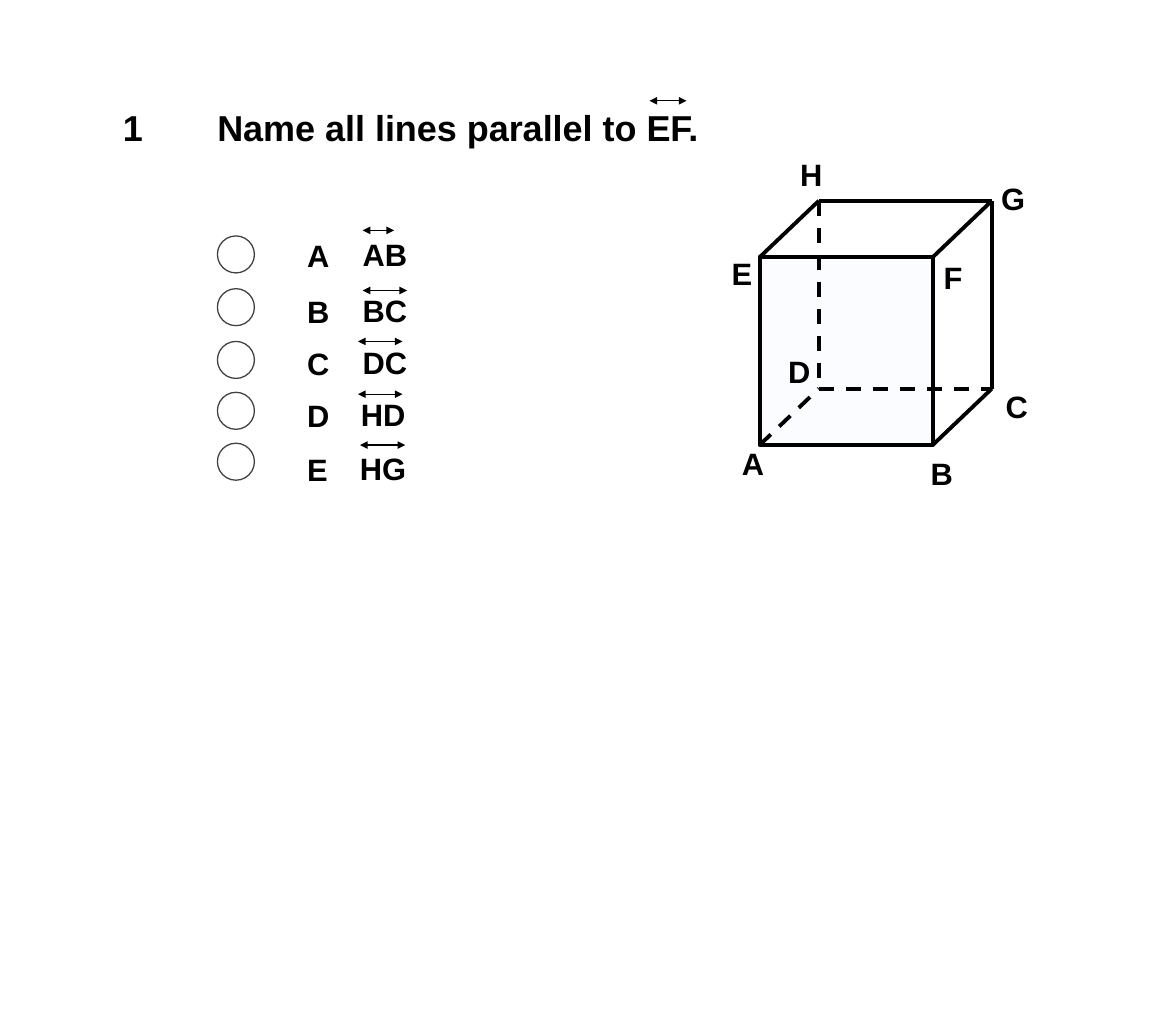
from lxml.etree import SubElement
from pptx import Presentation
from pptx.dml.color import RGBColor
from pptx.enum.dml import MSO_LINE
from pptx.enum.shapes import MSO_CONNECTOR, MSO_SHAPE
from pptx.oxml.ns import qn
from pptx.util import Inches, Pt

BLACK = RGBColor(0x00, 0x00, 0x00)
WHITE = RGBColor(0xFF, 0xFF, 0xFF)
GREY = RGBColor(0x40, 0x40, 0x40)
FACE_TINT = RGBColor(0xFA, 0xFC, 0xFF)

CHOICES = [
    ("A", "AB", 2.49, 0.12, 0.34, 0.00),
    ("B", "BC", 3.09, 0.12, 0.48, 0.05),
    ("C", "DC", 3.65, 0.07, 0.48, 0.04),
    ("D", "HD", 4.22, 0.07, 0.48, 0.04),
    ("E", "HG", 4.80, 0.09, 0.49, 0.01),
]
ANSWER_SHIFT = {"HD": -0.02, "HG": -0.03}
BUBBLE_TOPS = [2.55, 3.12, 3.69, 4.24, 4.79]

LABEL_OFFSETS = {
    "A": (-0.29, -0.05),
    "B": (-0.12, 0.05),
    "C": (0.05, -0.06),
    "D": (-0.43, -0.44),
    "E": (-0.40, -0.08),
    "F": (0.02, -0.03),
    "G": (0.00, -0.28),
    "H": (-0.30, -0.54),
}
VISIBLE_EDGES = ["HG", "EH", "FG", "BC", "GC"]
HIDDEN_EDGES = ["HD", "DC", "AD"]


def add_words(slide, words, left, top, width, height, size, inset=(0.1, 0.05)):
    box = slide.shapes.add_textbox(
        Inches(left), Inches(top), Inches(width), Inches(height))
    frame = box.text_frame
    frame.word_wrap = True
    frame.margin_left = frame.margin_right = Inches(inset[0])
    frame.margin_top = frame.margin_bottom = Inches(inset[1])
    run = frame.paragraphs[0].add_run()
    run.text = words
    run.font.name = "Arial"
    run.font.size = Pt(size)
    run.font.bold = True
    run.font.color.rgb = BLACK


def add_line(slide, start, end, weight):
    line = slide.shapes.add_connector(
        MSO_CONNECTOR.STRAIGHT, *(Inches(v) for v in (*start, *end)))
    line.line.color.rgb = BLACK
    line.line.width = Pt(weight)
    SubElement(line._element.spPr, qn("a:effectLst"))
    return line


def add_line_symbol(slide, left, top, width):
    symbol = add_line(slide, (left, top), (left + width, top), 1)
    outline = symbol.line._get_or_add_ln()
    for end in ("a:headEnd", "a:tailEnd"):
        SubElement(outline, qn(end), type="triangle")


def add_outlined(slide, kind, left, top, width, height, fill, stroke, weight):
    shape = slide.shapes.add_shape(
        kind, Inches(left), Inches(top), Inches(width), Inches(height))
    shape.shadow.inherit = False
    shape.fill.solid()
    shape.fill.fore_color.rgb = fill
    shape.line.color.rgb = stroke
    shape.line.width = Pt(weight)


def add_question(slide, left, top):
    add_words(slide, "1", left, top, 0.62, 0.57, 28)
    add_words(slide, "Name all lines parallel to EF.", left + 1.02, top, 6.2, 0.57, 28)
    add_line_symbol(slide, left + 5.79, top, 0.4)


def add_choices(slide, left):
    inset = (0.12, 0.06)
    for choice, bubble_top in zip(CHOICES, BUBBLE_TOPS):
        letter, answer, top, symbol_shift, symbol_width, symbol_drop = choice
        answer_left = left + 1.45 + ANSWER_SHIFT.get(answer, 0)
        add_outlined(slide, MSO_SHAPE.OVAL, left, bubble_top, 0.4, 0.4, WHITE, GREY, 1)
        add_words(slide, letter, left + 0.85, top + 0.01, 0.44, 0.52, 24, inset)
        add_words(slide, answer, answer_left, top, 0.83, 0.52, 24, inset)
        add_line_symbol(
            slide, left + 1.45 + symbol_shift, top + symbol_drop, symbol_width)


def add_cube(slide, left, top, width, height, depth_x, depth_y):
    front_left, front_right = left, left + width - depth_x
    front_top, front_bottom = top + depth_y, top + height
    front = {
        "A": (front_left, front_bottom),
        "B": (front_right, front_bottom),
        "E": (front_left, front_top),
        "F": (front_right, front_top),
    }
    corners = dict(front)
    for near, far in ("AD", "BC", "EH", "FG"):
        x, y = front[near]
        corners[far] = (x + depth_x, y - depth_y)

    add_outlined(slide, MSO_SHAPE.RECTANGLE, front_left, front_top,
                 width - depth_x, height - depth_y, FACE_TINT, BLACK, 3)
    for start, end in VISIBLE_EDGES:
        add_line(slide, corners[start], corners[end], 3)
    for start, end in HIDDEN_EDGES:
        edge = add_line(slide, corners[start], corners[end], 3)
        edge.line.dash_style = MSO_LINE.DASH
    for letter, (dx, dy) in LABEL_OFFSETS.items():
        x, y = corners[letter]
        add_words(slide, letter, x + dx, y + dy, 0.58, 0.61, 24)


def main():
    deck = Presentation()
    deck.slide_width, deck.slide_height = Inches(12.71), Inches(11.11)
    slide = deck.slides.add_slide(deck.slide_layouts[6])
    add_question(slide, 1.23, 1.09)
    add_cube(slide, 8.21, 2.17, 2.51, 2.64, 0.64, 0.61)
    add_choices(slide, 2.35)
    deck.save("out.pptx")


if __name__ == "__main__":
    main()
